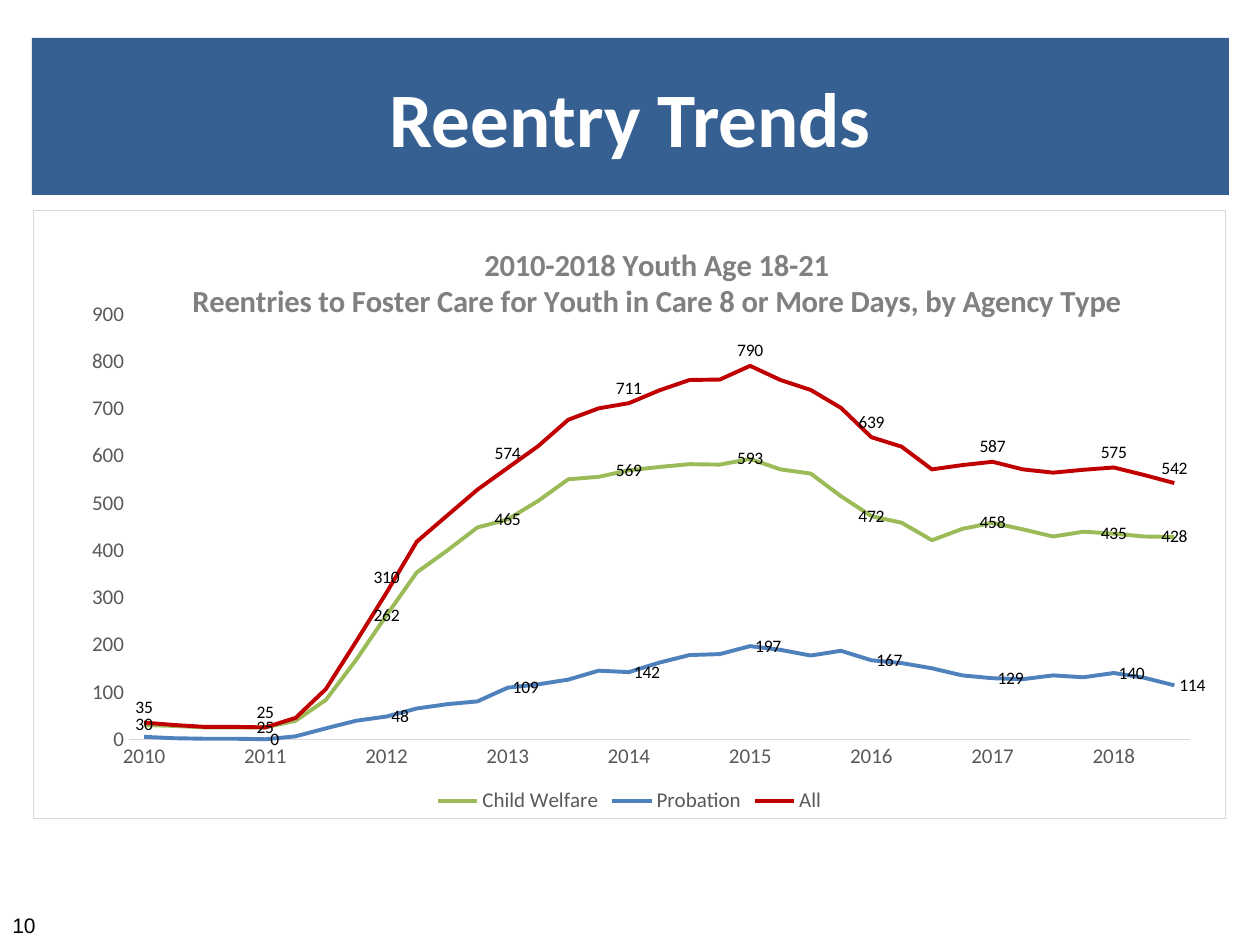
import lxml.etree
import pptx
import pptx.chart.data
import pptx.dml.color
import pptx.enum.chart
import pptx.enum.shapes
import pptx.enum.text
import pptx.oxml
import pptx.oxml.ns
import pptx.util

THEME = {
    "banner": "376092",
    "white": "FFFFFF",
    "border": "D9D9D9",
    "banner_text": {"name": "Calibri", "size": 44, "bold": True, "color": "FFFFFF"},
    "page_text": {"name": "Arial", "size": 12, "bold": False, "color": "000000"},
    "title_text": {"name": "Calibri", "size": 17.5, "bold": True, "color": "808080"},
    "axis_text": {"name": "Calibri", "size": 12, "bold": False, "color": "595959"},
    "label_text": {"name": "Calibri", "size": 10, "bold": False, "color": "000000"},
}
SCALE = 914400 / 126
qn = pptx.oxml.ns.qn
rgb = pptx.dml.color.RGBColor.from_string
Position = pptx.enum.chart.XL_LABEL_POSITION


def style(font, values):
    for key, value in values.items():
        if key == "color":
            font.color.rgb = rgb(value)
        else:
            setattr(font, key, pptx.util.Pt(value) if key == "size" else value)


def place(element, index, values):
    for old in element.findall(qn("c:layout")):
        element.remove(old)
    layout = lxml.etree.Element(qn("c:layout"))
    manual = lxml.etree.SubElement(layout, qn("c:manualLayout"))
    for key, value in values.items():
        lxml.etree.SubElement(manual, qn("c:" + key)).set("val", str(value))
    element.insert(index, layout)


deck = pptx.Presentation()
deck.slide_width, deck.slide_height = round(1260 * SCALE), round(945 * SCALE)
page = deck.slides.add_slide(deck.slide_layouts[6])

banner = page.shapes.add_shape(
    pptx.enum.shapes.MSO_SHAPE.RECTANGLE,
    *[round(px * SCALE) for px in (32, 38, 1197, 157)])
banner.shadow.inherit = False
banner.fill.solid()
banner.fill.fore_color.rgb = rgb(THEME["banner"])
banner.line.fill.background()
banner.text_frame.vertical_anchor = pptx.enum.text.MSO_ANCHOR.MIDDLE
para = banner.text_frame.paragraphs[0]
para.alignment = pptx.enum.text.PP_ALIGN.CENTER
span = para.add_run()
span.text = "Reentry Trends"
style(span.font, THEME["banner_text"])

box = page.shapes.add_textbox(*[round(px * SCALE) for px in (0, 906, 49, 38)])
box.text_frame.word_wrap = False
span = box.text_frame.paragraphs[0].add_run()
span.text = "10"
style(span.font, THEME["page_text"])

SERIES = [
    ("Child Welfare", "9BBB59", Position.CENTER, 0,
     [30, 28, 25, 25, 25, 39, 83, 168, 262, 353, 399, 448, 465, 504, 550, 555, 569, 576,
      582, 581, 593, 571, 562, 514, 472, 458, 421, 445, 458, 444, 429, 439, 435, 429, 428]),
    ("Probation", "4F81BD", Position.RIGHT, 4,
     [5, 2, 1, 1, 0, 6, 23, 39, 48, 65, 74, 80, 109, 116, 126, 145, 142, 162,
      178, 180, 197, 189, 177, 187, 167, 161, 150, 135, 129, 127, 135, 131, 140, 130, 114]),
    ("All", "C00000", Position.ABOVE, 0,
     [35, 30, 26, 26, 25, 45, 106, 207, 310, 418, 473, 528, 574, 620, 676, 700, 711, 738,
      760, 761, 790, 760, 739, 701, 639, 619, 571, 580, 587, 571, 564, 570, 575, 559, 542]),
]
quarters = len(SERIES[0][4])
data = pptx.chart.data.CategoryChartData()
data.categories = ["" if index % 4 else str(2010 + index // 4) for index in range(quarters)]
for name, color, position, first, values in SERIES:
    data.add_series(name, values)
chart = page.shapes.add_chart(
    pptx.enum.chart.XL_CHART_TYPE.LINE,
    *[round(px * SCALE) for px in (33, 210, 1193, 609)], data).chart
style(chart.font, THEME["label_text"])

frame = pptx.oxml.parse_xml(
    f'<c:spPr {pptx.oxml.ns.nsdecls("c", "a")}>'
    f'<a:solidFill><a:srgbClr val="{THEME["white"]}"/></a:solidFill>'
    f'<a:ln w="9525"><a:solidFill><a:srgbClr val="{THEME["border"]}"/></a:solidFill></a:ln>'
    '</c:spPr>')
chart.element.find(qn("c:chart")).addnext(frame)

chart.has_title = True
heading = chart.chart_title.text_frame
heading.text = ("2010-2018 Youth Age 18-21\n"
                "Reentries to Foster Care for Youth in Care 8 or More Days, by Agency Type")
for para in heading.paragraphs:
    para.alignment = pptx.enum.text.PP_ALIGN.CENTER
    for span in para.runs:
        style(span.font, THEME["title_text"])
place(chart.element.find(".//" + qn("c:title")), 1,
      {"xMode": "edge", "yMode": "edge", "x": 0.13, "y": 0.05})
place(chart.element.find(".//" + qn("c:plotArea")), 0,
      {"layoutTarget": "inner", "xMode": "edge", "yMode": "edge",
       "x": 0.08, "y": 0.17, "w": 0.89, "h": 0.7})

chart.has_legend = True
chart.legend.position = pptx.enum.chart.XL_LEGEND_POSITION.BOTTOM
chart.legend.include_in_layout = False
style(chart.legend.font, THEME["axis_text"])

for axis in (chart.category_axis, chart.value_axis):
    axis.major_tick_mark = axis.minor_tick_mark = pptx.enum.chart.XL_TICK_MARK.NONE
    axis.has_major_gridlines = False
    style(axis.tick_labels.font, THEME["axis_text"])
chart.category_axis.format.line.color.rgb = rgb(THEME["border"])
chart.category_axis.format.line.width = pptx.util.Pt(0.75)
chart.value_axis.format.line.fill.background()
chart.value_axis.minimum_scale = 0
chart.value_axis.maximum_scale = 900
chart.value_axis.major_unit = 100

chart.plots[0].vary_by_categories = False
for series, (name, color, position, first, values) in zip(chart.plots[0].series, SERIES):
    series.smooth = False
    series.marker.style = pptx.enum.chart.XL_MARKER_STYLE.NONE
    series.format.line.color.rgb = rgb(color)
    series.format.line.width = pptx.util.Pt(2.25)
    series.data_labels.show_value = False
    for index in [*range(first, quarters, 4), quarters - 1]:
        series.points[index].data_label.position = position

deck.save("out.pptx")
